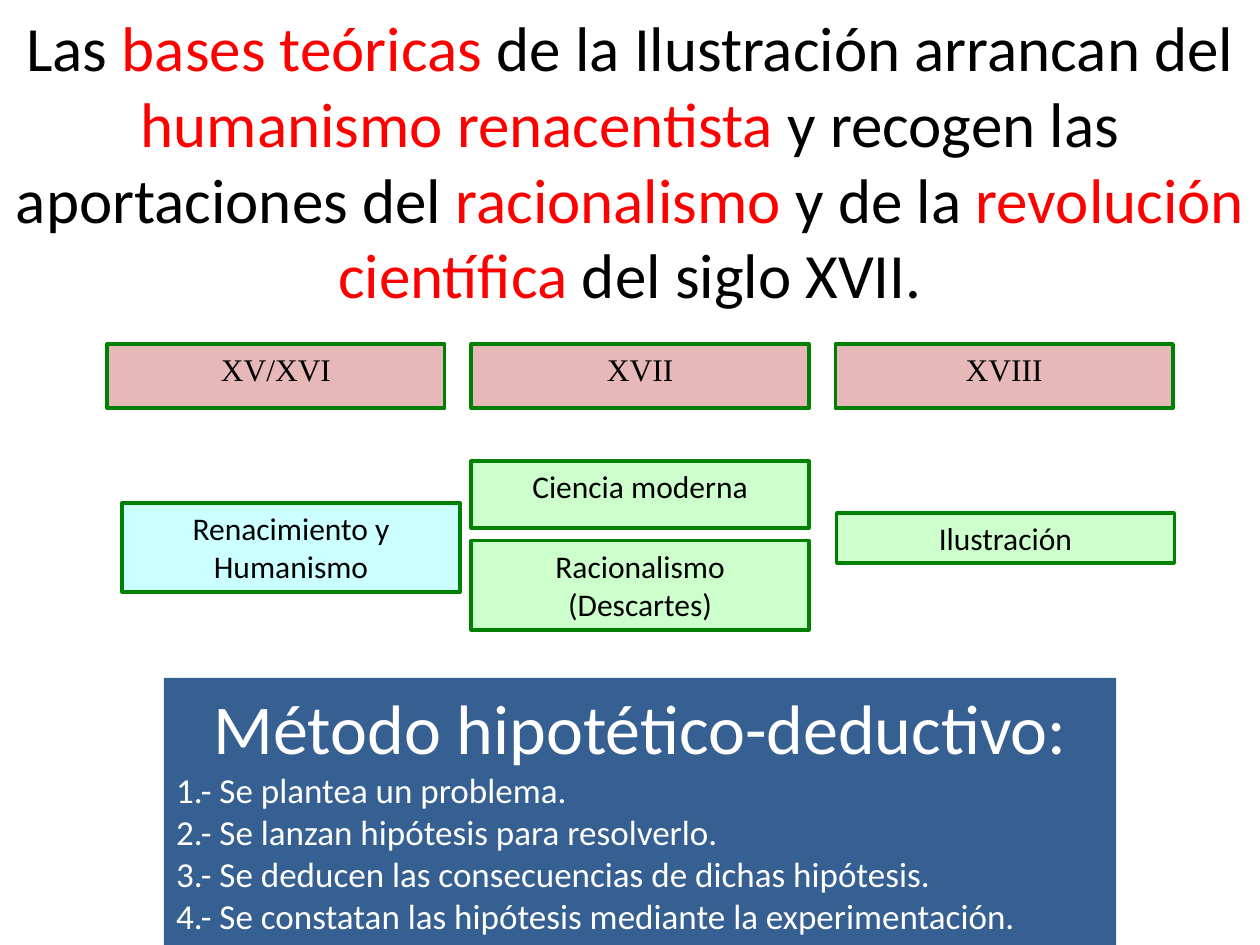
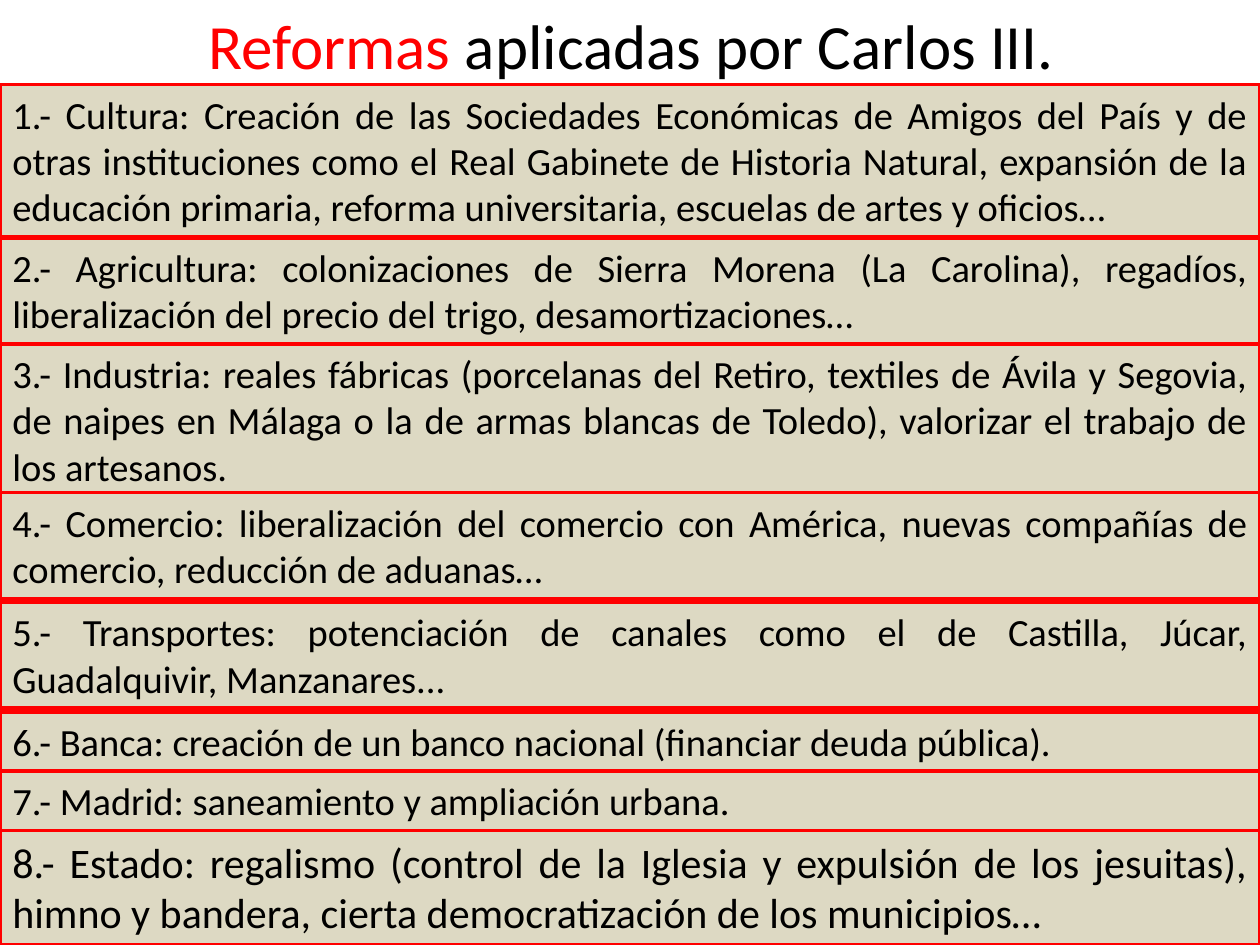
from pptx import Presentation
from pptx.dml.color import RGBColor
from pptx.enum.shapes import MSO_SHAPE
from pptx.enum.text import MSO_ANCHOR, MSO_AUTO_SIZE, PP_ALIGN
from pptx.util import Inches, Pt

RECTANGLE = MSO_SHAPE.RECTANGLE
CENTER, JUSTIFY = PP_ALIGN.CENTER, PP_ALIGN.JUSTIFY
FRAME_FORMAT = {"word_wrap": True, "auto_size": MSO_AUTO_SIZE.NONE,
                "vertical_anchor": MSO_ANCHOR.TOP}
BLACK, WHITE, RED = "000000", "FFFFFF", "FF0000"
GREEN, PINK, CYAN, MINT = "008000", "E6B9B8", "CCFFFF", "CCFFCC"
BLUE, SAND = "376092", "DDD9C3"
BODY_FONT, CENTURY_FONT = "Calibri", "Times New Roman"
TITLE_SIZE = 36
TITLE_ONLY = 5

CENTURIES = ["XV/XVI", "XVII", "XVIII"]
MOVEMENTS = [
    ("Renacimiento y Humanismo", (0.12, 1.26, 2.68, 0.71), CYAN),
    ("Ciencia moderna", (2.89, 0.93, 2.68, 0.53), MINT),
    ("Racionalismo (Descartes)", (2.89, 1.56, 2.68, 0.71), MINT),
    ("Ilustración", (5.79, 1.34, 2.68, 0.4), MINT),
]
METHOD_STEPS = [
    "Se plantea un problema.",
    "Se lanzan hipótesis para resolverlo.",
    "Se deducen las consecuencias de dichas hipótesis.",
    "Se constatan las hipótesis mediante la experimentación.",
]
REFORMS = [
    (0, 1.21, 22, "Cultura: Creación de las Sociedades Económicas de Amigos del País y de "
     "otras instituciones como el Real Gabinete de Historia Natural, expansión de la "
     "educación primaria, reforma universitaria, escuelas de artes y oficios…"),
    (1.22, 0.84, 22, "Agricultura: colonizaciones de Sierra Morena (La Carolina), regadíos, "
     "liberalización del precio del trigo, desamortizaciones…"),
    (2.06, 1.21, 22, "Industria: reales fábricas (porcelanas del Retiro, textiles de Ávila y "
     "Segovia, de naipes en Málaga o la de armas blancas de Toledo), valorizar el trabajo "
     "de los artesanos."),
    (3.24, 0.84, 22, "Comercio: liberalización del comercio con América, nuevas compañías de "
     "comercio, reducción de aduanas…"),
    (4.11, 0.84, 22, "Transportes: potenciación de canales como el de Castilla, Júcar, "
     "Guadalquivir, Manzanares..."),
    (4.98, 0.47, 22, "Banca: creación de un banco nacional (financiar deuda pública)."),
    (5.45, 0.47, 22, "Madrid: saneamiento y ampliación urbana."),
    (5.92, 0.91, 24, "Estado: regalismo (control de la Iglesia y expulsión de los jesuitas), "
     "himno y bandera, cierta democratización de los municipios…"),
]


def color(value):
    """Turn a hex string into a colour."""
    return RGBColor.from_string(value)


def apply_format(target, values):
    """Set each named attribute on the target."""
    for name, value in values.items():
        setattr(target, name, value)


def write_paragraph(paragraph, runs, size, alignment, font=BODY_FONT):
    """Fill a paragraph with (text, colour) runs."""
    paragraph.alignment = alignment
    for text, text_color in runs:
        run = paragraph.add_run()
        run.text = text
        apply_format(run.font, {"name": font, "size": Pt(size)})
        run.font.color.rgb = color(text_color)


def add_box(slide, box, fill, line=None):
    """Add a flat rectangle and return its text frame."""
    shape = slide.shapes.add_shape(RECTANGLE, *map(Inches, box))
    shape.shadow.inherit = False
    shape.fill.solid()
    shape.fill.fore_color.rgb = color(fill)
    if line:
        shape.line.color.rgb = color(line)
        shape.line.width = Pt(2)
    else:
        shape.line.fill.background()
    apply_format(shape.text_frame, FRAME_FORMAT)
    return shape.text_frame


def add_titled_slide(presentation, box, runs):
    """Add a title-only slide with a centred title in the box."""
    slide = presentation.slides.add_slide(presentation.slide_layouts[TITLE_ONLY])
    title = slide.shapes.title
    apply_format(title, dict(zip(("left", "top", "width", "height"), map(Inches, box))))
    apply_format(title.text_frame, FRAME_FORMAT)
    write_paragraph(title.text_frame.paragraphs[0], runs, TITLE_SIZE, CENTER)
    return slide


def add_timeline(slide, left, top):
    """Place the centuries and the movements below them."""
    for index, century in enumerate(CENTURIES):
        frame = add_box(slide, (left + index * 2.89, top, 2.68, 0.51), PINK, GREEN)
        write_paragraph(frame.paragraphs[0], [(century, BLACK)], 18, CENTER, CENTURY_FONT)
    for name, (x, y, width, height), fill in MOVEMENTS:
        frame = add_box(slide, (left + x, top + y, width, height), fill, GREEN)
        write_paragraph(frame.paragraphs[0], [(name, BLACK)], 18, CENTER)


def add_method_panel(slide, box):
    """Place the panel with the numbered steps of the method."""
    frame = add_box(slide, box, BLUE)
    heading = [("Método hipotético-deductivo:", WHITE)]
    write_paragraph(frame.paragraphs[0], heading, 40, CENTER)
    for number, step in enumerate(METHOD_STEPS, 1):
        write_paragraph(frame.add_paragraph(), [(f"{number}.- {step}", WHITE)], 20, JUSTIFY)


def add_reforms(slide, left, top, width):
    """Stack the numbered reforms from the given corner."""
    for number, (offset, height, size, text) in enumerate(REFORMS, 1):
        frame = add_box(slide, (left, top + offset, width, height), SAND, RED)
        write_paragraph(frame.paragraphs[0], [(f"{number}.- {text}", BLACK)], size, JUSTIFY)


def build_foundations_slide(presentation):
    """Build the slide on the roots of the Enlightenment."""
    slide = add_titled_slide(presentation, (0, 0.02, 10, 2.52), [
        ("Las ", BLACK), ("bases teóricas ", RED),
        ("de la Ilustración arrancan del ", BLACK), ("humanismo renacentista ", RED),
        ("y recogen las aportaciones del ", BLACK), ("racionalismo", RED),
        (" y de la ", BLACK), ("revolución científica", RED),
        (" del siglo XVII.", BLACK),
    ])
    add_timeline(slide, 0.85, 2.73)
    add_method_panel(slide, (1.3, 5.38, 7.56, 2.12))


def build_reforms_slide(presentation):
    """Build the slide on the reforms of Carlos III."""
    slide = add_titled_slide(presentation, (0.01, 0, 10, 0.71), [
        ("Reformas", RED), (" aplicadas por Carlos III.", BLACK),
    ])
    add_reforms(slide, 0, 0.67, 10)


def main():
    """Build and save the presentation."""
    presentation = Presentation()
    apply_format(presentation, {"slide_width": Inches(10), "slide_height": Inches(7.5)})
    build_foundations_slide(presentation)
    build_reforms_slide(presentation)
    presentation.save("out.pptx")


if __name__ == "__main__":
    main()
